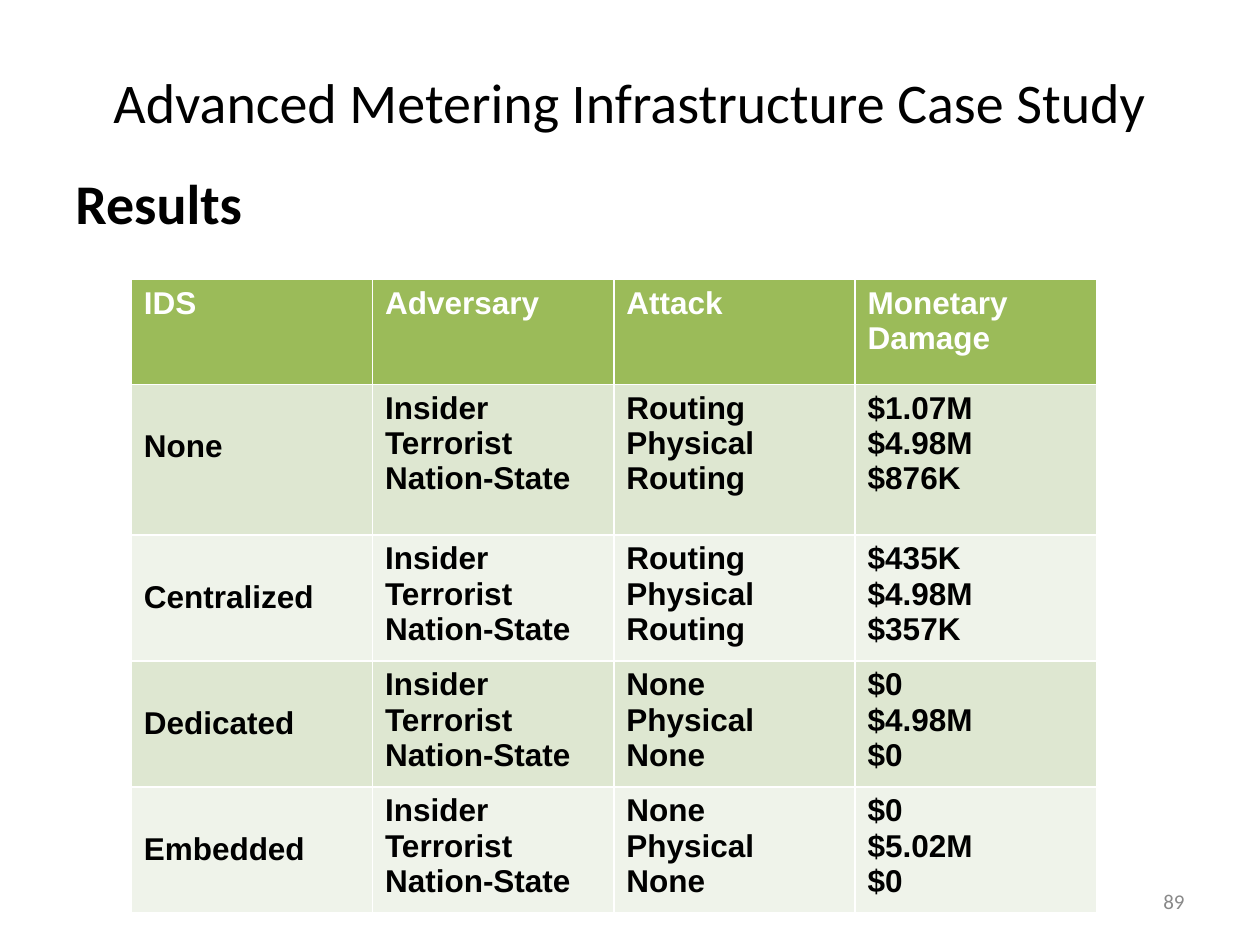
from lxml import etree
from pptx import Presentation
from pptx import util as u
from pptx.dml.color import RGBColor
from pptx.enum import text
from pptx.oxml import ns

BLACK = RGBColor(0x00, 0x00, 0x00)
WHITE = RGBColor(0xFF, 0xFF, 0xFF)
GREY = RGBColor(0x89, 0x89, 0x89)
GREEN = RGBColor(0x9B, 0xBB, 0x59)
BANDS = (RGBColor(0xDE, 0xE7, 0xD1), RGBColor(0xEF, 0xF3, 0xEA))

HEADINGS = ("IDS", "Adversary", "Attack", "Monetary Damage")
ADVERSARIES = ("Insider", "Terrorist", "Nation-State")
RESULTS = (
    ("None", ("Routing", "Physical", "Routing"), ("$1.07M", "$4.98M", "$876K")),
    ("Centralized", ("Routing", "Physical", "Routing"), ("$435K", "$4.98M", "$357K")),
    ("Dedicated", ("None", "Physical", "None"), ("$0", "$4.98M", "$0")),
    ("Embedded", ("None", "Physical", "None"), ("$0", "$5.02M", "$0")),
)
COLUMN_WIDTH = 137.9
ROW_HEIGHTS = (60.2, 86, 67.7, 67.7, 67.7)
TOP_MARGIN = 3.6
LABEL_TOP_MARGIN = 25.6  # sets the IDS name level with the second adversary


def format_font(font, color, **values):
    font.color.rgb = color
    for name, value in values.items():
        setattr(font, name, value)


def add_text(slide, box, words, color, size, align, anchor, bold=False):
    frame = slide.shapes.add_textbox(*map(u.Pt, box)).text_frame
    frame.word_wrap = True
    frame.vertical_anchor = anchor
    line = frame.paragraphs[0]
    line.text = words
    line.alignment = align
    format_font(line.font, color, name="Calibri", size=u.Pt(size), bold=bold)


def add_borders(cell):
    """Draw a thin white line on all four sides."""
    properties = cell._tc.get_or_add_tcPr()
    for side in ("lnL", "lnR", "lnT", "lnB"):
        border = etree.SubElement(properties, ns.qn(f"a:{side}"), w=str(u.Pt(1)))
        fill = etree.SubElement(border, ns.qn("a:solidFill"))
        etree.SubElement(fill, ns.qn("a:srgbClr"), val=str(WHITE))


def fill_cell(cell, lines, color, background, top_margin=TOP_MARGIN):
    add_borders(cell)
    cell.fill.solid()
    cell.fill.fore_color.rgb = background
    cell.margin_top = u.Pt(top_margin)
    cell.text_frame.text = "\n".join(lines)
    for line in cell.text_frame.paragraphs:
        format_font(line.font, color, name="Arial", size=u.Pt(18), bold=True)


def add_results_table(slide):
    rows, columns = len(ROW_HEIGHTS), len(HEADINGS)
    box = (75, 159.5, COLUMN_WIDTH * columns, sum(ROW_HEIGHTS))
    table = slide.shapes.add_table(rows, columns, *map(u.Pt, box)).table
    for column in table.columns:
        column.width = u.Pt(COLUMN_WIDTH)
    for row, height in zip(table.rows, ROW_HEIGHTS):
        row.height = u.Pt(height)

    for column, heading in enumerate(HEADINGS):
        fill_cell(table.cell(0, column), [heading], WHITE, GREEN)
    for index, (ids, attacks, damages) in enumerate(RESULTS):
        band = BANDS[index % 2]
        row = index + 1
        fill_cell(table.cell(row, 0), [ids], BLACK, band, LABEL_TOP_MARGIN)
        for column, lines in enumerate((ADVERSARIES, attacks, damages), start=1):
            fill_cell(table.cell(row, column), lines, BLACK, band)


def main():
    deck = Presentation()
    deck.slide_width, deck.slide_height = u.Pt(720), u.Pt(540)
    slide = deck.slides.add_slide(deck.slide_layouts[6])
    align, anchor = text.PP_ALIGN, text.MSO_ANCHOR

    add_text(slide, (36, 38, 648, 40), "Advanced Metering Infrastructure Case Study",
             BLACK, 32, align.CENTER, anchor.MIDDLE)
    add_text(slide, (36, 92.5, 648, 411), "Results",
             BLACK, 32, align.LEFT, anchor.TOP, bold=True)
    add_text(slide, (516, 500.5, 168, 28.75), "89",
             GREY, 12, align.RIGHT, anchor.MIDDLE)
    add_results_table(slide)
    deck.save("out.pptx")


if __name__ == "__main__":
    main()
